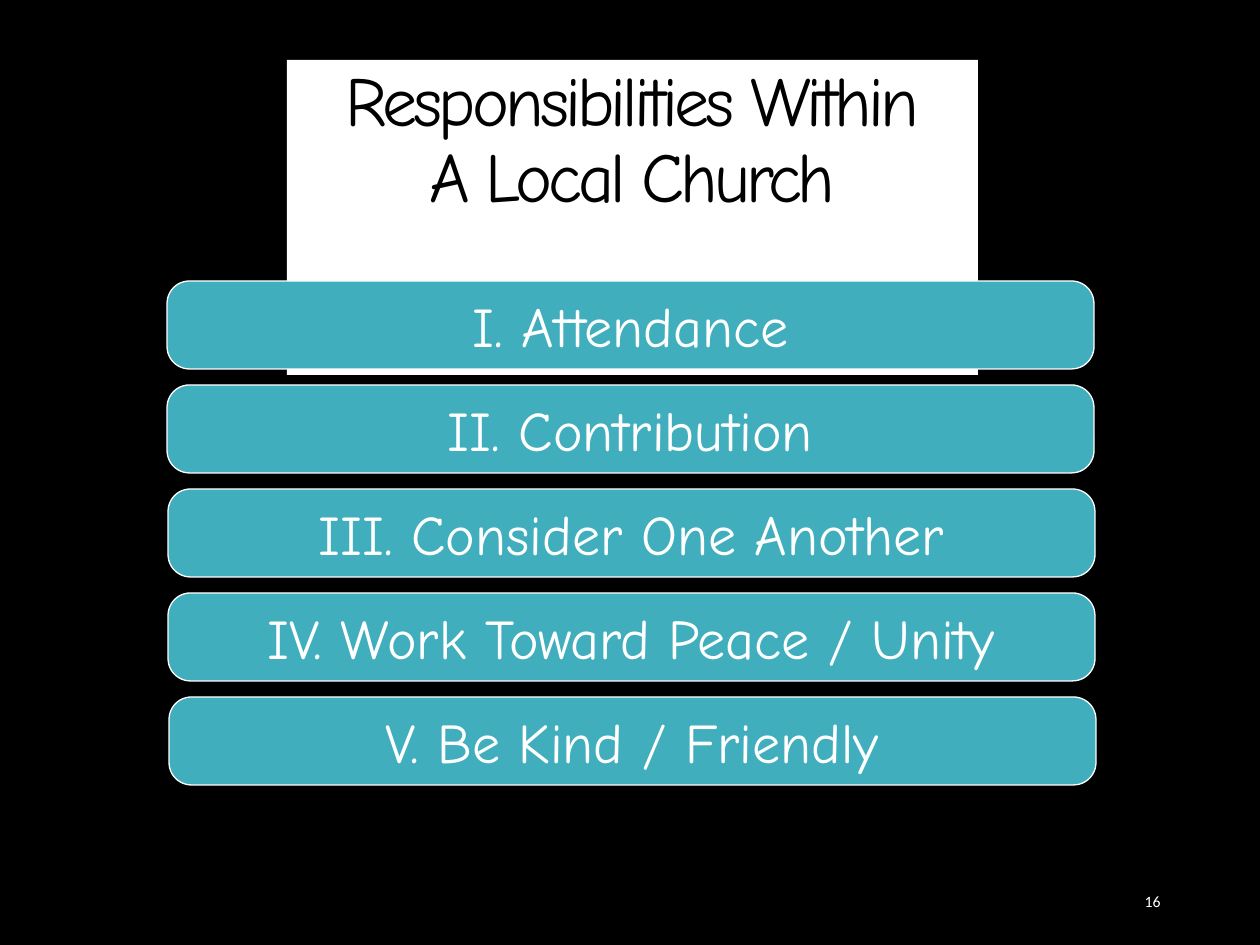
"""Build the slide listing the responsibilities within a local church."""
from pptx import Presentation
from pptx.dml.color import RGBColor
from pptx.enum.shapes import MSO_SHAPE as Shape
from pptx.enum.text import MSO_ANCHOR as Anchor, PP_ALIGN as Align
from pptx.util import Emu, Pt

TITLE_LINES = ["Responsibilities Within", "A Local Church"]
RESPONSIBILITIES = [
    "I. Attendance",
    "II. Contribution",
    "III. Consider One Another",
    "IV. Work Toward Peace / Unity",
    "V. Be Kind / Friendly",
]
PAGE_NUMBER = "16"

THEME = {
    "black": RGBColor.from_string("000000"),
    "white": RGBColor.from_string("FFFFFF"),
    "teal": RGBColor.from_string("41AEBD"),
    "title": {"name": "Comic Neue", "size": Pt(40)},
    "bar": {"name": "Comic Neue", "size": Pt(32)},
    "number": {"name": "Calibri", "size": Pt(9)},
    "outline": Pt(0.75),
    "title_tracking": -220,
}

SLIDE_SIZE = (1260, 945)
TITLE_BOX = (287, 60, 691, 315)
NUMBER_BOX = (890, 876, 283, 50)
BAR_LEFT, BAR_TOP, BAR_WIDTH, BAR_HEIGHT = 167, 281, 927, 88
BAR_PITCH = 104
BAR_ROUNDING = 0.255


def px(length):
    return Emu(round(length * 914400 / 126))


def write(shape, lines, style, color, align, anchor, wrap):
    frame = shape.text_frame
    frame.word_wrap = wrap
    frame.vertical_anchor = anchor
    paragraph = frame.paragraphs[0]
    paragraph.alignment = align
    for index, line in enumerate(lines):
        if index:
            paragraph.add_line_break()
        run = paragraph.add_run()
        run.text = line
        for attribute, value in THEME[style].items():
            setattr(run.font, attribute, value)
        run.font.color.rgb = THEME[color]
    return paragraph


def add_panel(slide, kind, box, fill):
    shape = slide.shapes.add_shape(kind, *map(px, box))
    shape.shadow.inherit = False
    shape.fill.solid()
    shape.fill.fore_color.rgb = THEME[fill]
    return shape


def add_title(slide):
    panel = add_panel(slide, Shape.RECTANGLE, TITLE_BOX, "white")
    panel.line.fill.background()
    paragraph = write(panel, TITLE_LINES, "title", "black", Align.CENTER, Anchor.TOP, False)
    paragraph.line_spacing = 0.9
    for run in paragraph.runs:
        run.font._element.set("spc", str(THEME["title_tracking"]))


def add_bar(slide, index, label):
    box = (BAR_LEFT + index // 2, BAR_TOP + index * BAR_PITCH, BAR_WIDTH, BAR_HEIGHT)
    bar = add_panel(slide, Shape.ROUNDED_RECTANGLE, box, "teal")
    bar.adjustments[0] = BAR_ROUNDING
    bar.line.color.rgb = THEME["white"]
    bar.line.width = THEME["outline"]
    write(bar, [label], "bar", "white", Align.CENTER, Anchor.MIDDLE, False)


def main():
    presentation = Presentation()
    presentation.slide_width, presentation.slide_height = map(px, SLIDE_SIZE)
    slide = presentation.slides.add_slide(presentation.slide_layouts[6])
    slide.background.fill.solid()
    slide.background.fill.fore_color.rgb = THEME["black"]
    add_title(slide)
    for index, label in enumerate(RESPONSIBILITIES):
        add_bar(slide, index, label)
    number = slide.shapes.add_textbox(*map(px, NUMBER_BOX))
    write(number, [PAGE_NUMBER], "number", "white", Align.RIGHT, Anchor.MIDDLE, True)
    presentation.save("out.pptx")


if __name__ == "__main__":
    main()
